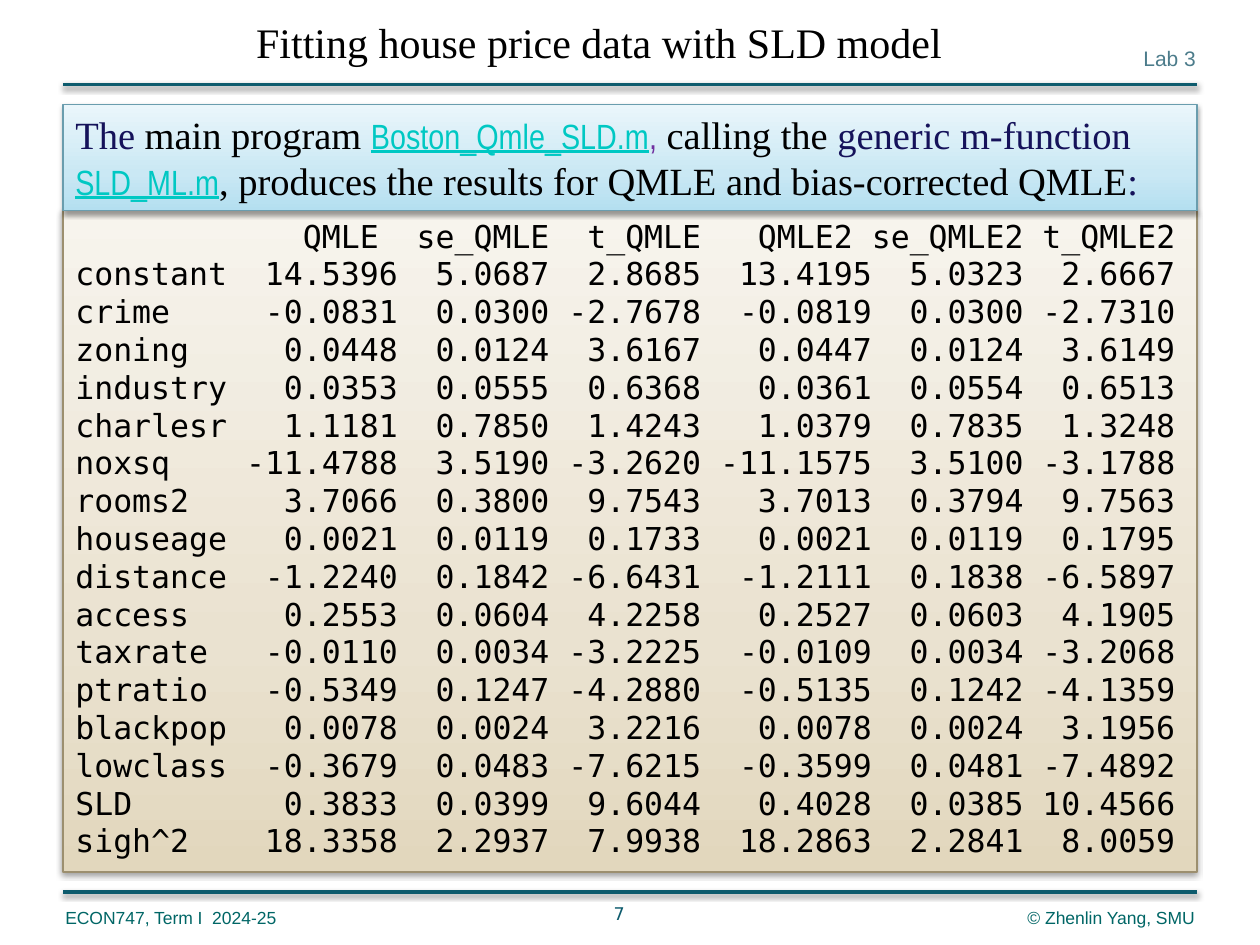
import pptx
import pptx.util
import pptx.dml.color
import pptx.enum.shapes
import pptx.enum.text
import pptx.oxml
import pptx.oxml.ns

Inches, Pt = pptx.util.Inches, pptx.util.Pt
ALIGN = pptx.enum.text.PP_ALIGN
NS = pptx.oxml.ns.nsdecls("a")

COLORS = {
    "black": "000000", "navy": "15125A", "link": "00C8C3", "purple": "7030A0",
    "rule": "0D5B6D", "lab": "4C7C8B", "footer": "006666",
    "sand line": "9C8F6F", "sky line": "6A9DAE",
}
SAND = [(0, "E2D7BD"), (35, "EAE2D0"), (100, "F7F4ED")]
SKY = [(0, "B4DFF0"), (35, "CAE8F4"), (100, "EAF6FB")]

SERIF, NARROW, MONO = "Times New Roman", "Arial Narrow", "DejaVu Sans Mono"

# text, left, top, width, height, alignment, font, size, color
LABELS = [
    ("Lab 3", 8.92, 0.31, 0.67, 0.3, ALIGN.RIGHT, "Arial", 12, "lab"),
    ("ECON747, Term I  2024-25", 0.42, 7.15, 2.33, 0.27, ALIGN.LEFT, "Arial", 10, "footer"),
    ("© Zhenlin Yang, SMU", 7.25, 7.15, 2.33, 0.27, ALIGN.RIGHT, "Arial", 10, "footer"),
    ("Fitting house price data with SLD model", 1.42, 0.08, 6.67, 0.5,
     ALIGN.CENTER, SERIF, 24, "black"),
    ("7", 3.75, 7.12, 2.33, 0.3, ALIGN.CENTER, "DejaVu Sans", 10, "rule"),
]

# text, font, size, color, underlined
INTRO = [
    ("The ", SERIF, 22, "navy", False),
    ("main program ", SERIF, 22, "black", False),
    ("Boston_Qmle_SLD.m", NARROW, 20, "link", True),
    (",", NARROW, 20, "purple", False),
    (" calling the ", SERIF, 22, "black", False),
    ("generic m-function ", SERIF, 22, "navy", False),
    ("SLD_ML.m", NARROW, 20, "link", True),
    (", produces the results for QMLE and bias-corrected QMLE", SERIF, 22, "black", False),
    (":", SERIF, 22, "navy", False),
]

RESULTS = [
    ("", "QMLE", "se_QMLE", "t_QMLE", "QMLE2", "se_QMLE2", "t_QMLE2"),
    ("constant", "14.5396", "5.0687", "2.8685", "13.4195", "5.0323", "2.6667"),
    ("crime", "-0.0831", "0.0300", "-2.7678", "-0.0819", "0.0300", "-2.7310"),
    ("zoning", "0.0448", "0.0124", "3.6167", "0.0447", "0.0124", "3.6149"),
    ("industry", "0.0353", "0.0555", "0.6368", "0.0361", "0.0554", "0.6513"),
    ("charlesr", "1.1181", "0.7850", "1.4243", "1.0379", "0.7835", "1.3248"),
    ("noxsq", "-11.4788", "3.5190", "-3.2620", "-11.1575", "3.5100", "-3.1788"),
    ("rooms2", "3.7066", "0.3800", "9.7543", "3.7013", "0.3794", "9.7563"),
    ("houseage", "0.0021", "0.0119", "0.1733", "0.0021", "0.0119", "0.1795"),
    ("distance", "-1.2240", "0.1842", "-6.6431", "-1.2111", "0.1838", "-6.5897"),
    ("access", "0.2553", "0.0604", "4.2258", "0.2527", "0.0603", "4.1905"),
    ("taxrate", "-0.0110", "0.0034", "-3.2225", "-0.0109", "0.0034", "-3.2068"),
    ("ptratio", "-0.5349", "0.1247", "-4.2880", "-0.5135", "0.1242", "-4.1359"),
    ("blackpop", "0.0078", "0.0024", "3.2216", "0.0078", "0.0024", "3.1956"),
    ("lowclass", "-0.3679", "0.0483", "-7.6215", "-0.3599", "0.0481", "-7.4892"),
    ("SLD", "0.3833", "0.0399", "9.6044", "0.4028", "0.0385", "10.4566"),
    ("sigh^2", "18.3358", "2.2937", "7.9938", "18.2863", "2.2841", "8.0059"),
]
# Right edge of each column, counted in characters
HEADER_ENDS = (16, 25, 33, 41, 50, 58)
VALUE_ENDS = (17, 25, 33, 42, 50, 58)
CHAR_WIDTH = Pt(18) * 0.602


def rgb(name):
    return pptx.dml.color.RGBColor.from_string(COLORS[name])


def style(span, font, size, color, underline=False):
    span.font.name = font
    span.font.size = Pt(size)
    span.font.color.rgb = rgb(color)
    if underline:
        span.font.underline = True


def add_shadow(shape):
    shape._element.spPr.append(pptx.oxml.parse_xml(
        f'<a:effectLst {NS}><a:outerShdw blurRad="{Pt(3.1)}" dist="{Pt(1.6)}" '
        'dir="5400000" rotWithShape="0"><a:srgbClr val="000000">'
        '<a:alpha val="38000"/></a:srgbClr></a:outerShdw></a:effectLst>'))


def add_rule(page, y):
    rule = page.shapes.add_connector(
        pptx.enum.shapes.MSO_CONNECTOR.STRAIGHT, Inches(0.5), Inches(y), Inches(9.5), Inches(y))
    rule.line.color.rgb = rgb("rule")
    rule.line.width = Pt(2)
    add_shadow(rule)


def add_panel(page, top, height, stops, line):
    """Add a full-width box with a gradient running from bottom to top."""
    box = page.shapes.add_shape(pptx.enum.shapes.MSO_SHAPE.RECTANGLE,
                                Inches(0.5), Inches(top), Inches(9), Inches(height))
    box.fill.gradient()
    box.fill.gradient_angle = 90
    stop_list = box._element.spPr.find(".//" + pptx.oxml.ns.qn("a:gsLst"))
    for stop in list(stop_list):
        stop_list.remove(stop)
    for position, color in stops:
        stop_list.append(pptx.oxml.parse_xml(
            f'<a:gs {NS} pos="{position * 1000}"><a:srgbClr val="{color}"/></a:gs>'))
    box.line.color.rgb = rgb(line)
    box.line.width = Pt(0.75)
    add_shadow(box)
    box.text_frame.word_wrap = True
    box.text_frame.vertical_anchor = pptx.enum.text.MSO_ANCHOR.TOP
    return box


def set_right_tabs(para, ends):
    tabs = "".join(f'<a:tab pos="{round(end * CHAR_WIDTH)}" algn="r"/>' for end in ends)
    para._p.get_or_add_pPr().append(pptx.oxml.parse_xml(f"<a:tabLst {NS}>{tabs}</a:tabLst>"))


def add_results(page):
    frame = add_panel(page, 1.67, 5.25, SAND, "sand line").text_frame
    frame.text = "\n".join("\t".join(row) for row in RESULTS)
    for index, para in enumerate(frame.paragraphs):
        para.alignment = ALIGN.LEFT
        para.line_spacing = Pt(21.6)
        set_right_tabs(para, VALUE_ENDS if index else HEADER_ENDS)
        for span in para.runs:
            style(span, MONO, 18, "black")


def add_intro(page):
    para = add_panel(page, 0.83, 0.84, SKY, "sky line").text_frame.paragraphs[0]
    para.alignment = ALIGN.LEFT
    para.line_spacing = Pt(26.3)
    for text, *look in INTRO:
        span = para.add_run()
        span.text = text
        style(span, *look)


def add_label(page, text, left, top, width, height, alignment, *look):
    box = page.shapes.add_textbox(Inches(left), Inches(top), Inches(width), Inches(height))
    box.text_frame.word_wrap = True
    box.text_frame.text = text
    para = box.text_frame.paragraphs[0]
    para.alignment = alignment
    style(para.runs[0], *look)


def main():
    deck = pptx.Presentation()
    deck.slide_width, deck.slide_height = Inches(10), Inches(7.5)
    page = deck.slides.add_slide(deck.slide_layouts[6])
    for y in (7.08, 0.67):
        add_rule(page, y)
    add_results(page)
    add_intro(page)
    for label in LABELS:
        add_label(page, *label)
    deck.save("out.pptx")


if __name__ == "__main__":
    main()
